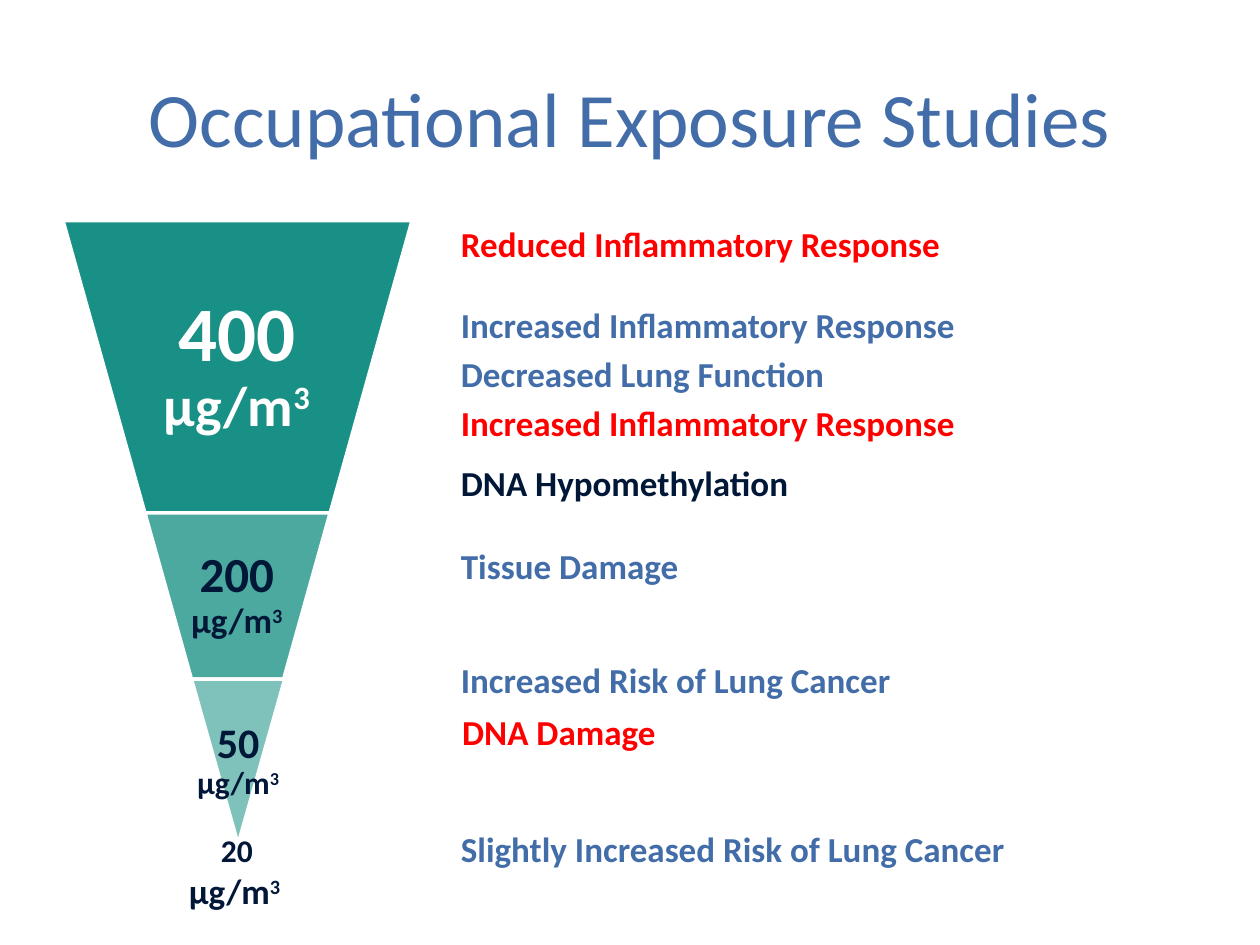
import pptx
import pptx.dml.color
import pptx.enum.shapes
import pptx.enum.text
import pptx.oxml.ns
import pptx.util
from lxml import etree

PX = 9144  # EMU per px, 100 px to the inch
FONT = "Calibri"
TEAL, NAVY, BLUE, RED, WHITE = "008578", "001737", "426DA9", "FF0000", "FFFFFF"
CENTER = pptx.enum.text.PP_ALIGN.CENTER
MIDDLE = pptx.enum.text.MSO_ANCHOR.MIDDLE
TOP = pptx.enum.text.MSO_ANCHOR.TOP


def px(*lengths):
    return [pptx.util.Emu(length * PX) for length in lengths]


def rgb(color):
    return pptx.dml.color.RGBColor.from_string(color)


def write_text(shape, runs, color, bold=True, align=None, anchor=TOP,
               wrap=True, inset=None, line_spacing=None):
    """Fill the shape with one paragraph of (text, size, superscript) runs."""
    frame = shape.text_frame
    frame.word_wrap = wrap
    frame.vertical_anchor = anchor
    if inset is not None:
        frame.margin_left, frame.margin_top, frame.margin_right, frame.margin_bottom = px(*[inset] * 4)
    paragraph = frame.paragraphs[0]
    paragraph.alignment = align
    paragraph.line_spacing = line_spacing
    for text, size, superscript in runs:
        run = paragraph.add_run()
        run.text = text
        run.font.name = FONT
        run.font.size = pptx.util.Pt(size)
        run.font.bold = bold
        run.font.color.rgb = rgb(color)
        if superscript:
            run._r.get_or_add_rPr().set("baseline", "30000")


def concentration(value, value_size, unit_size, cube="3"):
    return [(value, value_size, False), (" µg/m", unit_size, False), (cube, unit_size, True)]


def add_title(slide, box):
    title = slide.shapes.title
    title.left, title.top, title.width, title.height = px(*box)
    write_text(title, [("Occupational Exposure Studies", 44, False)], BLUE,
               bold=False, align=CENTER, anchor=MIDDLE)


def add_band(shapes, box, adjustment, opacity):
    """Draw one downward-narrowing slice of the funnel."""
    band = shapes.add_shape(pptx.enum.shapes.MSO_SHAPE.TRAPEZOID, *px(*box))
    band.rotation = 180
    band.adjustments[0] = adjustment
    band.shadow.inherit = False
    band.fill.solid()
    band.fill.fore_color.rgb = rgb(TEAL)
    band.line.color.rgb = rgb(WHITE)
    band.line.width = pptx.util.Pt(2)
    fill_color = band._element.spPr.find(
        pptx.oxml.ns.qn("a:solidFill") + "/" + pptx.oxml.ns.qn("a:srgbClr"))
    alpha = etree.SubElement(fill_color, pptx.oxml.ns.qn("a:alpha"))
    alpha.set("val", str(opacity * 1000))


def add_funnel(slide, box):
    left, top, width, height = box
    center = left + width / 2
    # width, text width, height, adjustment, opacity, inset, text colour, runs
    bands = [
        (277, 180, 232, 0.28, 90, 6, WHITE, concentration("400", 44, 32)),
        (147, 96, 132, 0.28, 70, 4, NAVY, concentration("200", 28, 20)),
        (74, 74, 132, 0.5, 50, 3, NAVY, concentration("50", 24, 18)),
    ]
    shapes = slide.shapes.add_group_shape().shapes
    bottom = top + height
    for band_width, text_width, band_height, adjustment, opacity, inset, color, runs in bands:
        band_height = min(band_height, bottom - top)
        add_band(shapes, (round(center - band_width / 2), top, band_width, band_height),
                 adjustment, opacity)
        label = shapes.add_textbox(
            *px(round(center - text_width / 2), top, text_width, band_height))
        write_text(label, runs, color, align=CENTER, anchor=MIDDLE,
                   inset=inset, line_spacing=0.9)
        top += band_height


def add_lowest_level(slide, box):
    label = slide.shapes.add_textbox(*px(*box))
    write_text(label, concentration("20", 18, 20, cube="3 "), NAVY, align=CENTER)


def add_effects(slide, box):
    left, top, width, height = box
    effects = [
        (0, 0, "Reduced Inflammatory Response", RED),
        (0, 64, "Increased Inflammatory Response", BLUE),
        (0, 103, "Decreased Lung Function", BLUE),
        (0, 142, "Increased Inflammatory Response", RED),
        (0, 189, "DNA Hypomethylation", NAVY),
        (0, 255, "Tissue Damage", BLUE),
        (0, 346, "Increased Risk of Lung Cancer", BLUE),
        (1, 387, "DNA Damage", RED),
        (0, 480, "Slightly Increased Risk of Lung Cancer", BLUE),
    ]
    for shift, offset, text, color in effects:
        label = slide.shapes.add_textbox(*px(left + shift, top + offset, width, height))
        write_text(label, [(text, 20, False)], color,
                   align=pptx.enum.text.PP_ALIGN.LEFT)


def main():
    presentation = pptx.Presentation()
    presentation.slide_width, presentation.slide_height = px(1000, 750)
    slide = presentation.slides.add_slide(presentation.slide_layouts[5])
    add_title(slide, (50, 30, 900, 125))
    add_funnel(slide, (50, 175, 277, 495))
    add_effects(slide, (356, 172, 456, 44))
    add_lowest_level(slide, (137, 652, 102, 111))
    presentation.save("out.pptx")


if __name__ == "__main__":
    main()
